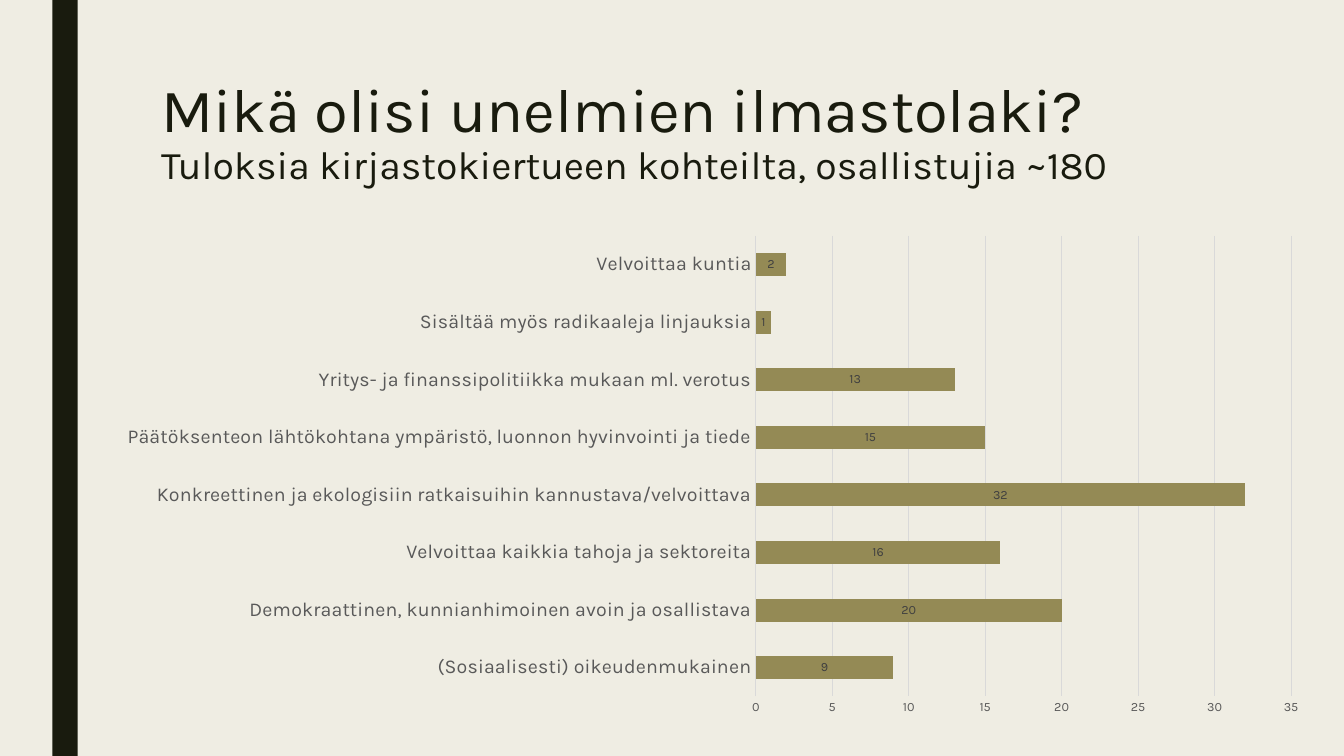
import pptx
import pptx.chart.data
import pptx.dml.color
import pptx.enum.chart
import pptx.enum.shapes
import pptx.enum.text
import pptx.oxml
import pptx.oxml.ns
import pptx.util
from pptx.util import Cm

ANSWERS = [
    ("(Sosiaalisesti) oikeudenmukainen", 9),
    ("Demokraattinen, kunnianhimoinen avoin ja osallistava", 20),
    ("Velvoittaa kaikkia tahoja ja sektoreita", 16),
    ("Konkreettinen ja ekologisiin ratkaisuihin kannustava/velvoittava", 32),
    ("Päätöksenteon lähtökohtana ympäristö, luonnon hyvinvointi ja tiede", 15),
    ("Yritys- ja finanssipolitiikka mukaan ml. verotus", 13),
    ("Sisältää myös radikaaleja linjauksia", 1),
    ("Velvoittaa kuntia", 2),
]


def color(code):
    return pptx.dml.color.RGBColor.from_string(code)


class Deck:
    font = "Karla"
    paper = "EFEDE3"
    ink = "191B0E"
    olive = "948A55"
    gray = "595959"
    label = "404040"
    grid = "D9D9D9"

    def __init__(self, show):
        self.slide = show.slides.add_slide(show.slide_layouts[6])
        self.fill(self.slide.background, self.paper)

    def fill(self, item, code):
        item.fill.solid()
        item.fill.fore_color.rgb = color(code)

    def style(self, font, size, code):
        font.name = self.font
        font.size = pptx.util.Pt(size)
        font.bold = False
        font.color.rgb = color(code)

    def rule(self, line):
        line.color.rgb = color(self.grid)
        line.width = pptx.util.Pt(0.75)

    def text(self, para, words, size=28, code=ink):
        run = para.add_run()
        run.text = words
        self.style(run.font, size, code)

    def bar(self, *box):
        shape = self.slide.shapes.add_shape(
            pptx.enum.shapes.MSO_SHAPE.RECTANGLE, *box)
        shape.shadow.inherit = False
        self.fill(shape, self.ink)
        shape.line.fill.background()

    def title(self, head, sub, *box):
        frame = self.slide.shapes.add_textbox(*box).text_frame
        frame.word_wrap = True
        frame.vertical_anchor = pptx.enum.text.MSO_ANCHOR.TOP
        para = frame.paragraphs[0]
        para.line_spacing = 0.89
        self.text(para, head, size=44)
        para.add_line_break()
        self.text(para, sub)

    def place(self, chart, **parts):
        """Fix the inner plot area as fractions of the chart."""
        area = chart.element.chart.plotArea
        for old in area.findall(pptx.oxml.ns.qn("c:layout")):
            area.remove(old)
        modes = {"layoutTarget": "inner", "xMode": "edge", "yMode": "edge"}
        tags = "".join(f'<c:{key} val="{val}"/>'
                       for key, val in {**modes, **parts}.items())
        area.insert(0, pptx.oxml.parse_xml(
            f'<c:layout {pptx.oxml.ns.nsdecls("c")}>'
            f'<c:manualLayout>{tags}</c:manualLayout></c:layout>'))

    def chart(self, rows, *box):
        kinds = pptx.enum.chart
        data = pptx.chart.data.CategoryChartData()
        data.categories = [name for name, _ in rows]
        data.add_series("Series 1", [count for _, count in rows])
        chart = self.slide.shapes.add_chart(
            kinds.XL_CHART_TYPE.BAR_STACKED, *box, data).chart
        chart.has_legend = False
        chart.has_title = False
        self.style(chart.font, 10, "000000")

        cats, vals = chart.category_axis, chart.value_axis
        for axis, size in ((cats, 14), (vals, 9)):
            axis.major_tick_mark = kinds.XL_TICK_MARK.NONE
            axis.minor_tick_mark = kinds.XL_TICK_MARK.NONE
            self.style(axis.tick_labels.font, size, self.gray)
        self.rule(cats.format.line)
        vals.format.line.fill.background()
        vals.has_major_gridlines = True
        self.rule(vals.major_gridlines.format.line)
        vals.minimum_scale, vals.maximum_scale, vals.major_unit = 0, 35, 5

        plot = chart.plots[0]
        plot.gap_width = 150
        plot.overlap = 100
        plot.vary_by_categories = False
        self.fill(plot.series[0].format, self.olive)
        labels = plot.series[0].data_labels
        labels.show_value = True
        labels.position = kinds.XL_LABEL_POSITION.CENTER
        self.style(labels.font, 9, self.label)
        return chart


def main():
    show = pptx.Presentation()
    show.slide_width, show.slide_height = Cm(33.87), Cm(19.05)
    deck = Deck(show)
    deck.bar(Cm(1.32), 0, Cm(0.64), show.slide_height)
    deck.title("Mikä olisi unelmien ilmastolaki? ",
               "Tuloksia kirjastokiertueen kohteilta, osallistujia ~180",
               Cm(3.81), Cm(1.9), Cm(26.67), Cm(4.11))
    chart = deck.chart(ANSWERS, Cm(2.49), Cm(5.69), Cm(30.66), Cm(12.62))
    deck.place(chart, x=0.54, y=0.02, w=0.44, h=0.92)
    show.save("out.pptx")


if __name__ == "__main__":
    main()
